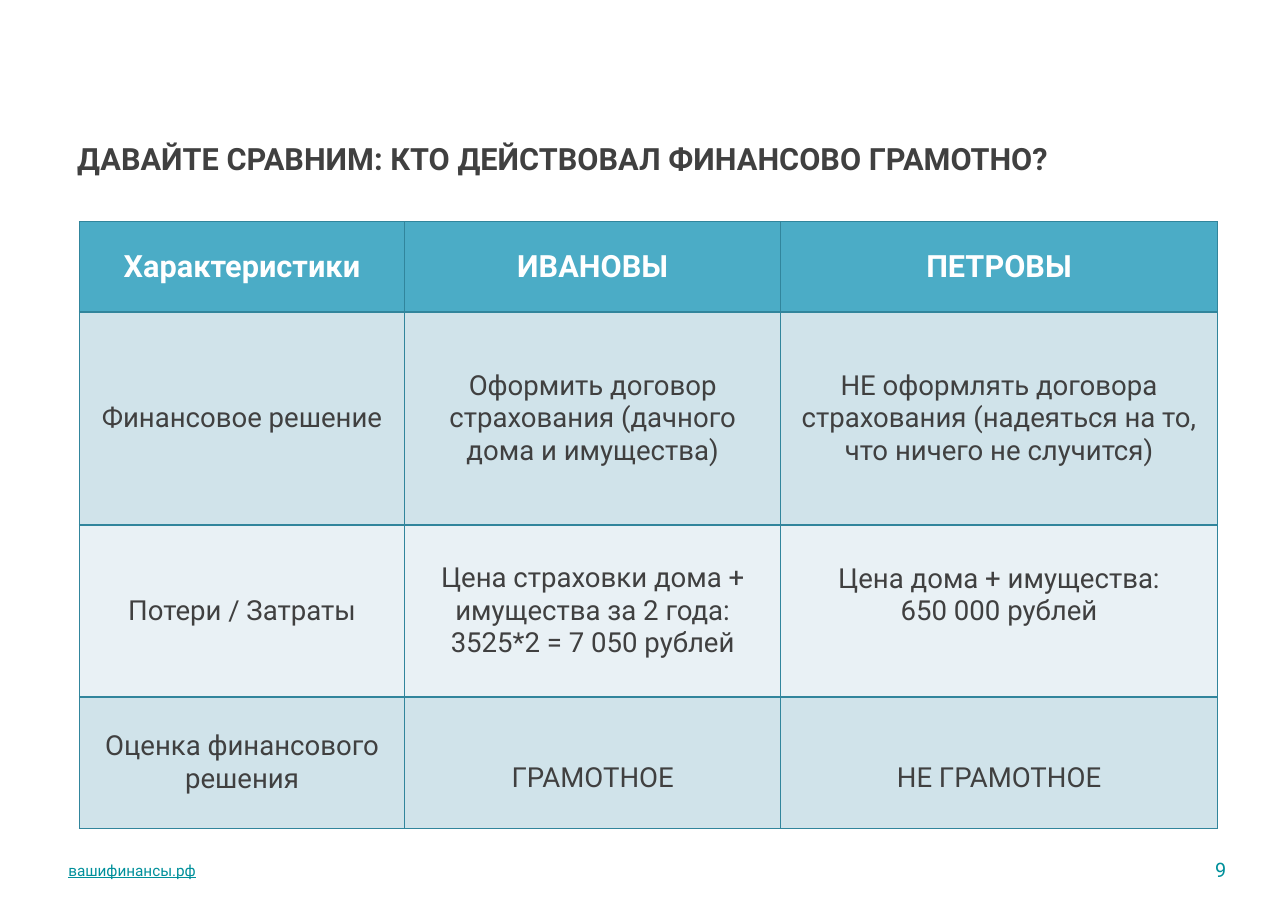
from dataclasses import dataclass

from lxml.etree import SubElement
from pptx import Presentation
from pptx.dml.color import RGBColor
from pptx.enum.text import MSO_ANCHOR as Anchor, PP_ALIGN as Align
from pptx.oxml.ns import qn
from pptx.util import Inches, Pt


@dataclass(frozen=True)
class Theme:
    font: str = "Roboto"
    text: str = "404040"
    accent: str = "00909B"
    header_text: str = "FFFFFF"
    header_fill: str = "4BACC6"
    band_fills: tuple = ("D0E3EA", "E9F1F5")
    border: str = "31859C"
    border_width: int = 1
    title_size: int = 20
    body_size: int = 18
    link_size: int = 10
    number_size: int = 13


THEME = Theme()
INSET = 0.05
BODY_LINE = 0.29  # height of one line of body text

COLUMN_WIDTHS = (2.95, 3.41, 3.96)
ROW_HEIGHTS = (0.82, 1.93, 1.56, 1.19)
COMPARISON = (
    ("Характеристики", "ИВАНОВЫ", "ПЕТРОВЫ"),
    ("Финансовое решение",
     "Оформить договор страхования (дачного дома и имущества)",
     "НЕ оформлять договора страхования (надеяться на то, что ничего не случится)"),
    ("Потери / Затраты",
     "Цена страховки дома + имущества за 2 года: 3525*2 = 7 050 рублей",
     "Цена дома + имущества:\n650 000 рублей"),
    ("Оценка финансового решения", "ГРАМОТНОЕ", "НЕ ГРАМОТНОЕ"),
)
# Extra margins that line up short answers with the longer cells beside them
CELL_MARGINS = {
    (2, 2): {"margin_bottom": Inches(INSET + BODY_LINE)},
    (3, 1): {"margin_top": Inches(INSET + BODY_LINE)},
    (3, 2): {"margin_top": Inches(INSET + BODY_LINE)},
}


def set_attributes(target, values):
    for name, value in values.items():
        setattr(target, name, value)


def write_text(text_frame, text, color, size, align=Align.LEFT, **font_values):
    text_frame.text = text
    font_values = {"name": THEME.font, "size": Pt(size), **font_values}
    for paragraph in text_frame.paragraphs:
        paragraph.alignment = align
        for run in paragraph.runs:
            set_attributes(run.font, font_values)
            run.font.color.rgb = RGBColor.from_string(color)


def add_label(slide, box, text, color, size, frame_values, **text_values):
    shape = slide.shapes.add_textbox(*map(Inches, box))
    margins = {f"margin_{side}": Inches(INSET)
               for side in ("left", "top", "right", "bottom")}
    set_attributes(shape.text_frame, {**margins, "word_wrap": True, **frame_values})
    write_text(shape.text_frame, text, color, size, **text_values)


def add_borders(cell):
    properties = cell._tc.get_or_add_tcPr()
    for side in ("lnL", "lnR", "lnT", "lnB"):
        line = SubElement(properties, qn(f"a:{side}"), w=str(Pt(THEME.border_width)))
        fill = SubElement(line, qn("a:solidFill"))
        SubElement(fill, qn("a:srgbClr"), val=THEME.border)


def add_title(slide, box):
    add_label(slide, box, "ДАВАЙТЕ СРАВНИМ: КТО ДЕЙСТВОВАЛ ФИНАНСОВО ГРАМОТНО?",
              THEME.text, THEME.title_size,
              {"margin_left": Inches(0.12), "vertical_anchor": Anchor.TOP}, bold=True)


def add_comparison(slide, box):
    table = slide.shapes.add_table(
        len(ROW_HEIGHTS), len(COLUMN_WIDTHS), *map(Inches, box)).table
    for column, width in zip(table.columns, COLUMN_WIDTHS):
        column.width = Inches(width)
    for row, height in zip(table.rows, ROW_HEIGHTS):
        row.height = Inches(height)

    for row_index, texts in enumerate(COMPARISON):
        is_header = row_index == 0
        if is_header:
            fill, color, size = THEME.header_fill, THEME.header_text, THEME.title_size
        else:
            fill = THEME.band_fills[(row_index - 1) % 2]
            color, size = THEME.text, THEME.body_size
        for column_index, text in enumerate(texts):
            cell = table.cell(row_index, column_index)
            cell.vertical_anchor = Anchor.MIDDLE
            set_attributes(cell, CELL_MARGINS.get((row_index, column_index), {}))
            write_text(cell.text_frame, text, color, size, Align.CENTER, bold=is_header)
            add_borders(cell)
            cell.fill.solid()
            cell.fill.fore_color.rgb = RGBColor.from_string(fill)


def add_footer(slide, box):
    left, top, width, height = box
    number_width = 0.32
    # Site address on the left, page number on the right
    add_label(slide, (left, top + 0.03, 3.97, 0.28), "вашифинансы.рф",
              THEME.accent, THEME.link_size,
              {"vertical_anchor": Anchor.MIDDLE}, underline=True)
    add_label(slide, (left + width - number_width, top, number_width, height), "9",
              THEME.accent, THEME.number_size,
              {"vertical_anchor": Anchor.MIDDLE, "word_wrap": False}, align=Align.RIGHT)


def main():
    presentation = Presentation()
    presentation.slide_width = Inches(11.68)
    presentation.slide_height = Inches(8.26)
    slide = presentation.slides.add_slide(presentation.slide_layouts[6])

    add_title(slide, (0.58, 1.22, 10.52, 0.96))
    add_comparison(slide, (0.72, 2.01, sum(COLUMN_WIDTHS), sum(ROW_HEIGHTS)))
    add_footer(slide, (0.57, 7.72, 10.6, 0.33))
    presentation.save("out.pptx")


if __name__ == "__main__":
    main()
